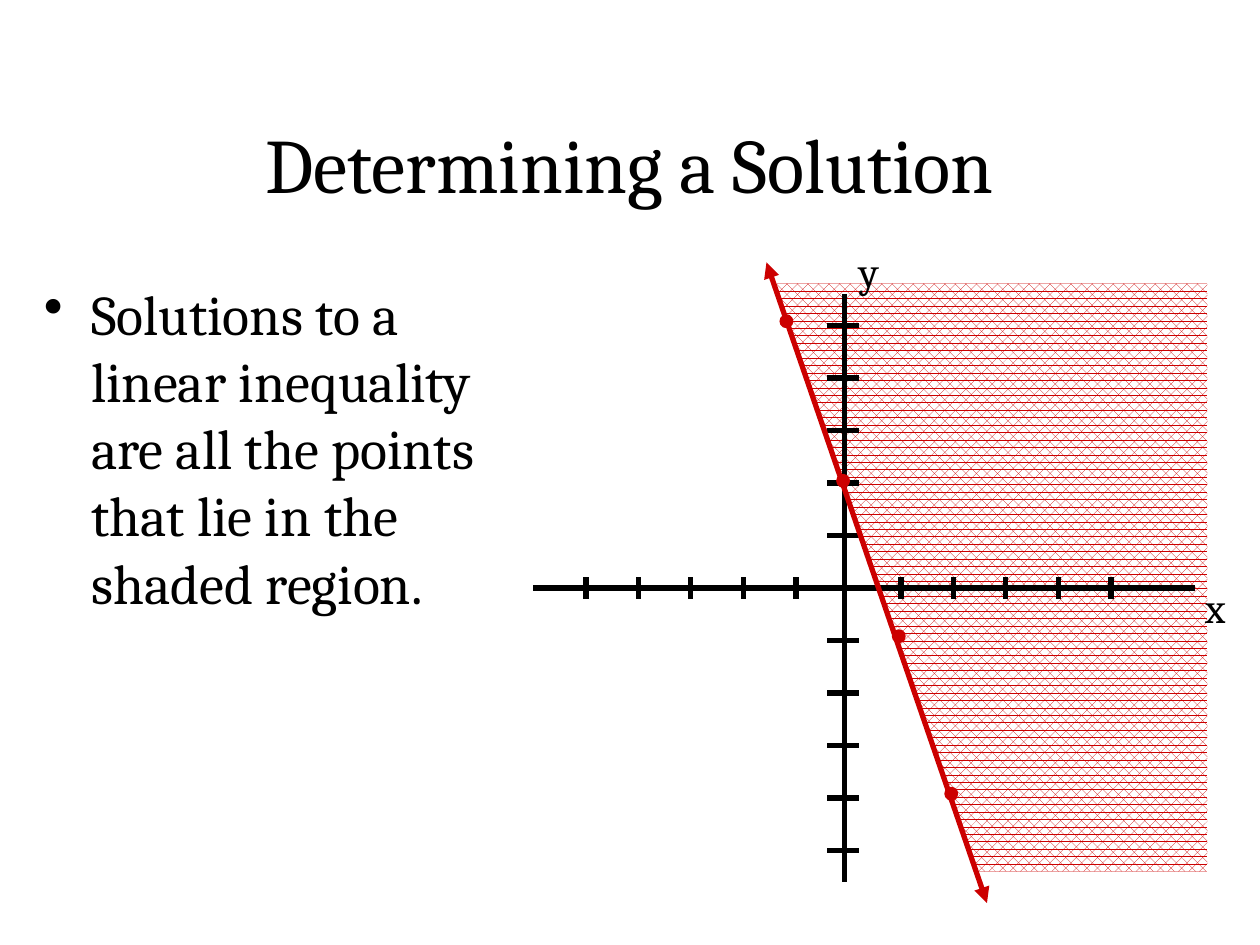
from lxml import etree
from pptx import Presentation
from pptx import util as u
from pptx.dml.color import RGBColor
from pptx.enum import dml, shapes, text
from pptx.oxml import ns

PX = 7620  # EMU per px, 120 px to the inch
FONT = "Cambria"
COLORS = {"ink": "000000", "red": "CC0000", "paper": "FFFFFF"}


def color(name):
    return RGBColor.from_string(COLORS[name])


def add_element(parent, tag, **attributes):
    return etree.SubElement(parent, ns.qn(tag), attributes)


class Board:
    """Holds the style and the current slide."""

    def __init__(self, slide):
        self.slide = slide
        self.shapes = slide.shapes

    def text(self, box, words, size, frame_format, paragraph_format):
        shape = self.shapes.add_textbox(*(u.Emu(n * PX) for n in box))
        frame = shape.text_frame
        for name, value in frame_format.items():
            setattr(frame, name, value)
        paragraph = frame.paragraphs[0]
        for name, value in paragraph_format.items():
            setattr(paragraph, name, value)
        run = paragraph.add_run()
        run.text = words
        for name, value in {"name": FONT, "size": u.Pt(size)}.items():
            setattr(run.font, name, value)
        run.font.color.rgb = color("ink")
        return paragraph

    def bullet(self, paragraph, indent):
        properties = paragraph._p.get_or_add_pPr()
        properties.set("marL", str(indent * PX))
        properties.set("indent", str(-indent * PX))
        add_element(properties, "a:buChar", char="•")

    def line(self, start, end, paint="ink", arrows=False):
        connector = self.shapes.add_connector(
            shapes.MSO_CONNECTOR.STRAIGHT, *(u.Emu(n * PX) for n in start + end))
        connector.line.width = u.Pt(3)
        connector.line.color.rgb = color(paint)
        if arrows:
            outline = connector.line._get_or_add_ln()
            for tag in ("a:headEnd", "a:tailEnd"):
                add_element(outline, tag, type="triangle")
        add_element(connector._element.spPr, "a:effectLst")

    def dot(self, left, top, size=12):
        shape = self.shapes.add_shape(
            shapes.MSO_SHAPE.OVAL, *(u.Emu(n * PX) for n in (left, top, size, size)))
        shape.shadow.inherit = False
        shape.fill.solid()
        shape.fill.fore_color.rgb = color("red")
        shape.line.color.rgb = color("red")
        shape.line.width = u.Pt(0.75)

    def region(self, points):
        builder = self.shapes.build_freeform(*points[0], scale=PX)
        builder.add_line_segments(points[1:], close=True)
        shape = builder.convert_to_shape()
        shape.shadow.inherit = False
        shape.fill.patterned()
        shape.fill.pattern = dml.MSO_PATTERN.PERCENT_60
        shape.fill.fore_color.rgb = color("red")
        shape.fill.back_color.rgb = color("paper")
        shape.line.fill.background()


def main():
    presentation = Presentation()
    presentation.slide_width = u.Inches(10)
    presentation.slide_height = u.Inches(7.5)
    board = Board(presentation.slides.add_slide(presentation.slide_layouts[6]))

    # Title and statement
    board.text((90, 80, 1020, 150), "Determining a Solution", 44,
               {"word_wrap": True, "vertical_anchor": text.MSO_ANCHOR.MIDDLE},
               {"alignment": text.PP_ALIGN.CENTER})
    statement = board.text(
        (30, 260, 460, 540),
        "Solutions to a linear inequality are all the points that lie in the shaded region.",
        32, {"word_wrap": True}, {"space_before": u.Pt(6.4)})
    board.bullet(statement, 45)

    # Shaded half-plane
    board.region([(740, 280), (930, 830), (1150, 830), (1150, 270), (740, 270)])

    # Axes, with five ticks on each side of the origin
    board.line((804, 280), (804, 840))
    board.line((508, 560), (1138, 560))
    for step in range(-5, 6):
        if step:
            tick_x, tick_y = 808 + 50 * step, 560 + 50 * step
            board.line((tick_x, 550), (tick_x, 570))
            board.line((788, tick_y), (818, tick_y))

    # Axis names
    for name, left, top in (("x", 1136, 548), ("y", 806, 228)):
        board.text((left, top, 44, 60), name, 24,
                   {"word_wrap": False,
                    "auto_size": text.MSO_AUTO_SIZE.SHAPE_TO_FIT_TEXT}, {})

    # Boundary line and the points on it
    for left, top in ((797, 452), (850, 600), (900, 750), (743, 300)):
        board.dot(left, top)
    board.line((730, 250), (940, 860), "red", arrows=True)

    presentation.save("out.pptx")


if __name__ == "__main__":
    main()
